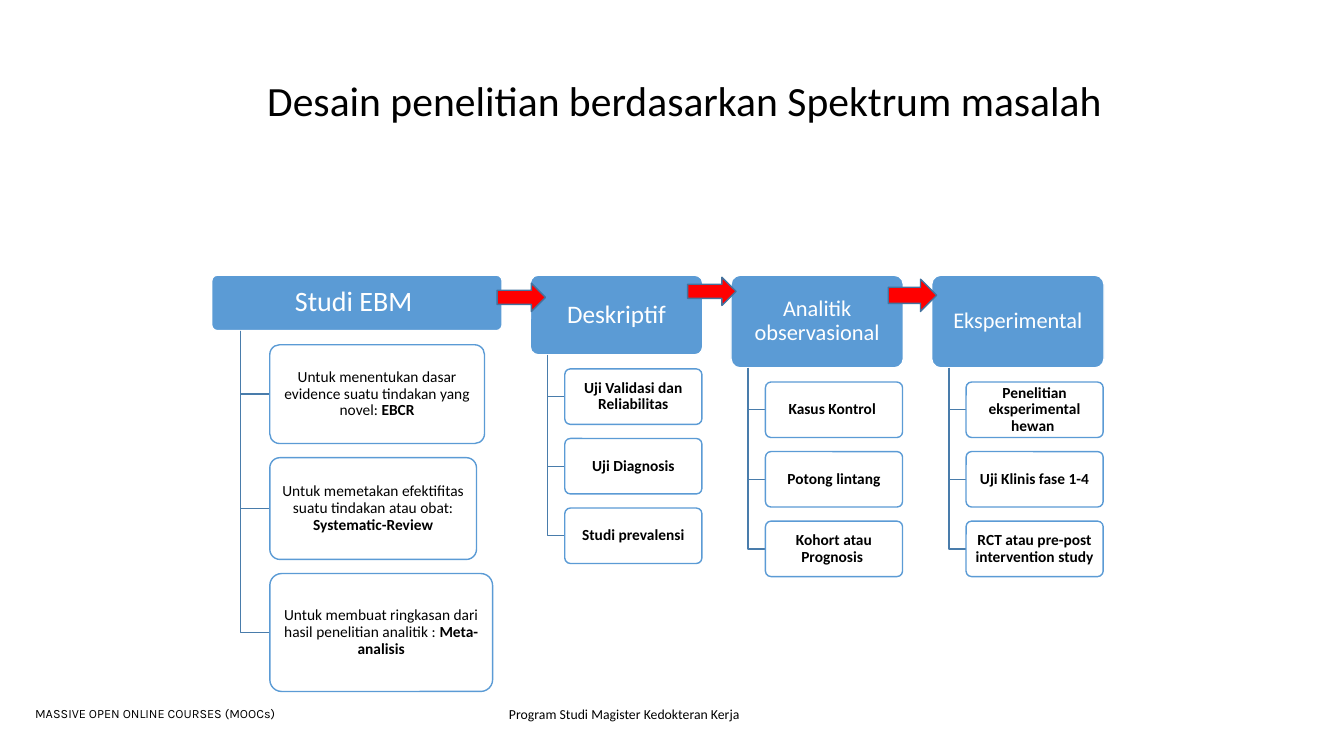
from pptx import Presentation
from pptx.dml.color import RGBColor
from pptx.enum import shapes, text
from pptx.oxml import parse_xml
from pptx.oxml.ns import nsdecls
from pptx.util import Inches, Pt

TITLE = "Desain penelitian berdasarkan Spektrum masalah"
FOOTERS = [  # text, left, top, width, height, font
    ("Program Studi Magister Kedokteran Kerja", (4.95, 6.95, 8.14, 0.27), {"name": "Calibri", "size": Pt(9.8)}),
    ("MASSIVE OPEN ONLINE COURSES (MOOCs)", (0.25, 6.95, 5.7, 0.25), {"name": "Karla", "size": Pt(9)}),
]
SMALL = (1.36, 0.55)
# heading, width, height, text size, [(plain text, bold text, (width, height))]
DESIGNS = [
    ("Studi EBM ", 2.88, 0.55, 20, [
        ("Untuk menentukan dasar evidence suatu tindakan yang novel: ", "EBCR", (2.13, 0.98)),
        ("Untuk memetakan efektifitas suatu tindakan atau obat: ", "Systematic-Review", (2.05, 1.01)),
        ("Untuk membuat ringkasan dari hasil penelitian analitik : ", "Meta-analisis", (2.21, 1.17)),
    ]),
    ("Deskriptif", 1.71, 0.79, 18, [
        ("", "Uji Validasi dan Reliabilitas", SMALL),
        ("", "Uji Diagnosis", SMALL),
        ("", "Studi prevalensi", SMALL),
    ]),
    ("Analitik observasional", 1.71, 0.92, 16, [
        ("", "Kasus Kontrol ", SMALL),
        ("", "Potong lintang", SMALL),
        ("", "Kohort atau Prognosis ", SMALL),
    ]),
    ("Eksperimental", 1.71, 0.92, 16, [
        ("", "Penelitian eksperimental hewan ", SMALL),
        ("", "Uji Klinis fase 1-4", SMALL),
        ("", "RCT atau pre-post intervention study", SMALL),
    ]),
]
ARROWS = [(6.82, 2.75, 0.48, 0.28), (8.81, 2.77, 0.48, 0.32), (4.93, 2.81, 0.48, 0.28)]
LEFT, TOP = 2.1, 2.73
COLUMN_GAP, ROW_GAP = 0.28, 0.14
BLUE, STEM, RED, ARROW_EDGE = "5B9BD5", "497CAB", "FF0000", "43739E"
WHITE, BLACK = "FFFFFF", "000000"


def color(value):
    return RGBColor.from_string(value)


def inches(values):
    return [Inches(value) for value in values]


def apply(target, values):
    for key, value in values.items():
        setattr(target, key, value)


def write(paragraph, runs, ink):
    """Add (text, font values) runs in one colour."""
    for words, font in runs:
        run = paragraph.add_run()
        run.text = words
        apply(run.font, font)
        run.font.color.rgb = color(ink)


def outline(shape, edge):
    shape.shadow.inherit = False
    shape.line.color.rgb = color(edge)
    shape.line.width = Pt(1)


def add_solid(slide, preset, box, fill, edge):
    shape = slide.shapes.add_shape(preset, *inches(box))
    shape.fill.solid()
    shape.fill.fore_color.rgb = color(fill)
    outline(shape, edge)
    return shape


def add_card(slide, box, fill, edge, runs, ink, inset):
    card = add_solid(slide, shapes.MSO_SHAPE.ROUNDED_RECTANGLE, box, fill, edge)
    card.adjustments[0] = 0.1
    side, end = inches(inset)
    apply(card.text_frame, {
        "word_wrap": True, "vertical_anchor": text.MSO_ANCHOR.MIDDLE,
        "margin_left": side, "margin_right": side, "margin_top": end, "margin_bottom": end,
    })
    paragraph = card.text_frame.paragraphs[0]
    apply(paragraph, {"alignment": text.PP_ALIGN.CENTER, "line_spacing": 0.9})
    write(paragraph, runs, ink)
    return card


def add_branch(slide, x, top, end_x, end_y):
    """Draw the bent line from a heading to one of its cards."""
    builder = slide.shapes.build_freeform(Inches(x), Inches(top))
    builder.add_line_segments([inches((x, end_y)), inches((end_x, end_y))], close=False)
    branch = builder.convert_to_shape()
    branch.fill.background()
    outline(branch, STEM)


def add_design(slide, x, heading, width, height, size, cards):
    add_card(slide, (x, TOP, width, height), BLUE, WHITE,
             [(heading, {"name": "Calibri", "size": Pt(size)})], WHITE, (0.04, 0.03))
    bottom = TOP + height
    card_x, y = x + 0.2 * width, bottom + ROW_GAP
    for plain, strong, (card_width, card_height) in cards:
        add_branch(slide, x + 0.1 * width, bottom, card_x, y + card_height / 2)
        base = {"name": "Calibri", "size": Pt(11)}
        runs = [(words, {**base, "bold": bold}) for words, bold in ((plain, False), (strong, True)) if words]
        card = add_card(slide, (card_x, y, card_width, card_height), WHITE, BLUE, runs, BLACK, (0.02, 0.02))
        fill = card.fill.fore_color._xFill[0]
        fill.append(parse_xml(f'<a:alpha {nsdecls("a")} val="90000"/>'))
        y += card_height + ROW_GAP


def main():
    deck = Presentation()
    apply(deck, {"slide_width": Inches(13.33), "slide_height": Inches(7.5)})
    slide = deck.slides.add_slide(deck.slide_layouts[5])

    for words, box, font in FOOTERS:
        footer = slide.shapes.add_textbox(*inches(box)).text_frame
        footer.word_wrap = True
        write(footer.paragraphs[0], [(words, font)], BLACK)

    title = slide.shapes.title
    apply(title, dict(zip(("left", "top", "width", "height"), inches((2.55, 0.49, 8.84, 1.06)))))
    apply(title.text_frame, {"vertical_anchor": text.MSO_ANCHOR.MIDDLE, "auto_size": text.MSO_AUTO_SIZE.NONE})
    heading = title.text_frame.paragraphs[0]
    apply(heading, {"alignment": text.PP_ALIGN.LEFT, "line_spacing": 0.9})
    write(heading, [(TITLE, {"name": "Calibri", "size": Pt(29.7)})], BLACK)

    x = LEFT
    for design in DESIGNS:
        add_design(slide, x, *design)
        x += design[1] + COLUMN_GAP

    for box in ARROWS:
        add_solid(slide, shapes.MSO_SHAPE.RIGHT_ARROW, box, RED, ARROW_EDGE)

    deck.save("out.pptx")


if __name__ == "__main__":
    main()
